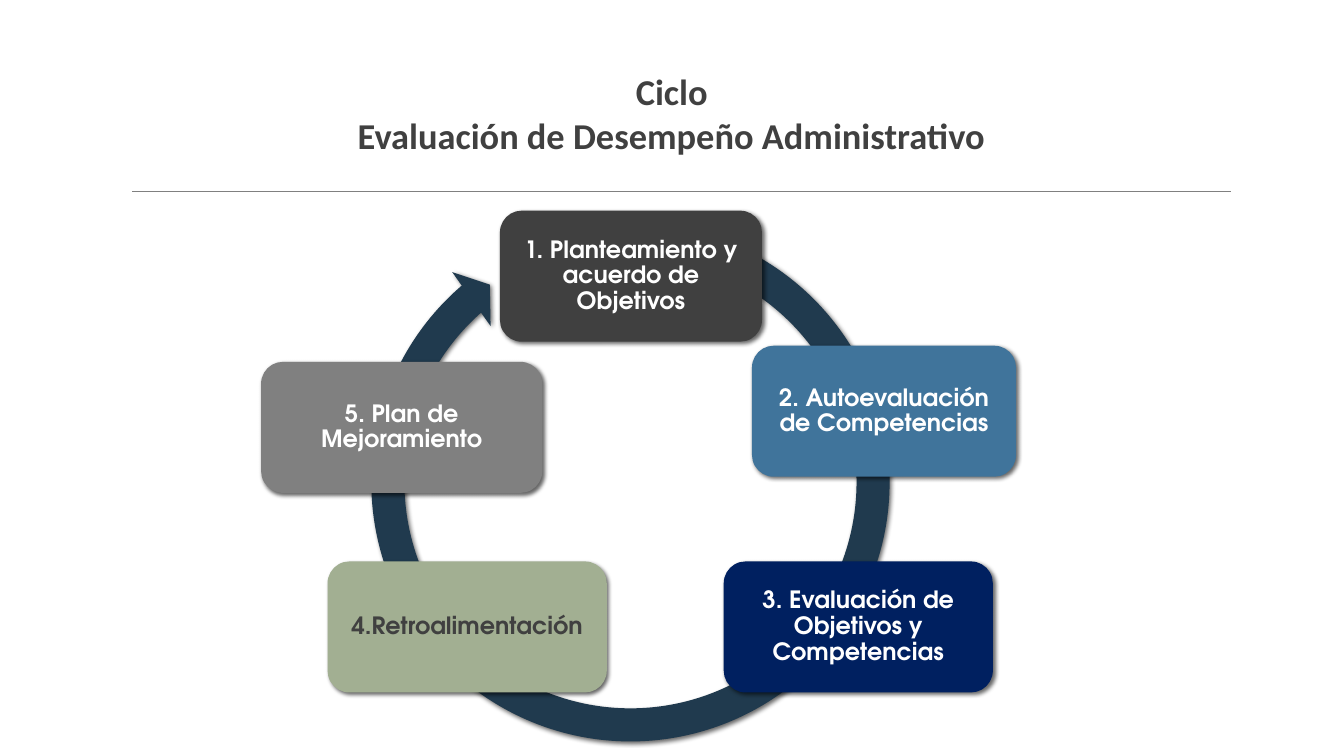
from lxml.etree import SubElement
from pptx import Presentation
from pptx.dml.color import RGBColor
from pptx.enum.shapes import MSO_CONNECTOR as Connector, MSO_SHAPE as Shape
from pptx.enum.text import MSO_ANCHOR as Anchor, PP_ALIGN as Align
from pptx.oxml.ns import qn
from pptx.util import Inches, Pt

CELL = 0.1
COLUMNS, ROWS = 133.33, 75


def color(value):
    return RGBColor.from_string(value)


def grid(*cells):
    return [Inches(cell * CELL) for cell in cells]


class CycleSlide:
    title_font, step_font = "Calibri", "TeX Gyre Adventor"
    title_size, step_size = 26, 17
    dark, light, gray, ring = "404040", "FFFFFF", "808080", "203A4E"
    step_height, step_margin = 13, 0.7

    def __init__(self, deck):
        self.page = deck.slides.add_slide(deck.slide_layouts[6])
        self.page.background.fill.solid()
        self.page.background.fill.fore_color.rgb = color(self.light)

    def set_text(self, frame, text, font, size, ink, spacing=1.0):
        frame.word_wrap = True
        frame.text = text
        for para in frame.paragraphs:
            para.alignment = Align.CENTER
            para.line_spacing = spacing
            for span in para.runs:
                span.font.name = font
                span.font.size = Pt(size)
                span.font.bold = True
                span.font.color.rgb = color(ink)

    def title(self, text, *place):
        box = self.page.shapes.add_textbox(*grid(*place))
        self.set_text(box.text_frame, text, self.title_font, self.title_size, self.dark)

    def rule(self, left, right, row):
        line = self.page.shapes.add_connector(
            Connector.STRAIGHT, *grid(left, row, right, row))
        line.line.color.rgb = color(self.gray)
        line.line.width = Pt(0.5)
        SubElement(line.element.spPr, qn("a:effectLst"))

    def shadowed(self, kind, fill, *place):
        shape = self.page.shapes.add_shape(kind, *grid(*place))
        shape.fill.solid()
        shape.fill.fore_color.rgb = color(fill)
        shape.line.fill.background()
        shape.shadow.inherit = False
        effects = shape.element.spPr.find(qn("a:effectLst"))
        shadow = SubElement(effects, qn("a:outerShdw"), blurRad=str(Pt(3)),
                            dist=str(Pt(2)), dir=str(45 * 60000), rotWithShape="0")
        black = SubElement(shadow, qn("a:srgbClr"), val="000000")
        SubElement(black, qn("a:alpha"), val="60000")
        return shape

    def cycle_arrow(self, left, top, size, adjustments):
        arrow = self.shadowed(Shape.CIRCULAR_ARROW, self.ring, left, top, size, size)
        for index, value in enumerate(adjustments):
            arrow.adjustments[index] = value

    def step(self, text, left, top, width, fill, ink):
        box = self.shadowed(Shape.ROUNDED_RECTANGLE, fill,
                            left, top, width, self.step_height)
        frame = box.text_frame
        frame.vertical_anchor = Anchor.MIDDLE
        margin, = grid(self.step_margin)
        frame.margin_left = frame.margin_right = margin
        frame.margin_top = frame.margin_bottom = margin
        self.set_text(frame, text, self.step_font, self.step_size, ink, 0.9)


def main():
    deck = Presentation()
    deck.slide_width, deck.slide_height = grid(COLUMNS, ROWS)
    slide = CycleSlide(deck)
    slide.rule(13.1, 122.1, 19)
    slide.title("Ciclo\nEvaluación de Desempeño Administrativo", 25.1, 6.4, 83.1, 9.8)
    slide.cycle_arrow(35.2, 20.5, 54.7, (0.06, 3.31, 137.42, 174.07, 0.06))
    steps = [
        ("1. Planteamiento y acuerdo de Objetivos", 49.6, 20.9, 26, slide.dark, slide.light),
        ("2. Autoevaluación de Competencias", 74.6, 34.3, 26.2, "40749B", slide.light),
        ("3. Evaluación de Objetivos y Competencias", 71.8, 55.7, 26.7, "002060", slide.light),
        ("4.Retroalimentación", 32.5, 55.7, 27.7, "A2AF92", slide.dark),
        ("5. Plan de Mejoramiento", 25.9, 35.9, 27.9, slide.gray, slide.light),
    ]
    for step in steps:
        slide.step(*step)
    deck.save("out.pptx")


if __name__ == "__main__":
    main()
